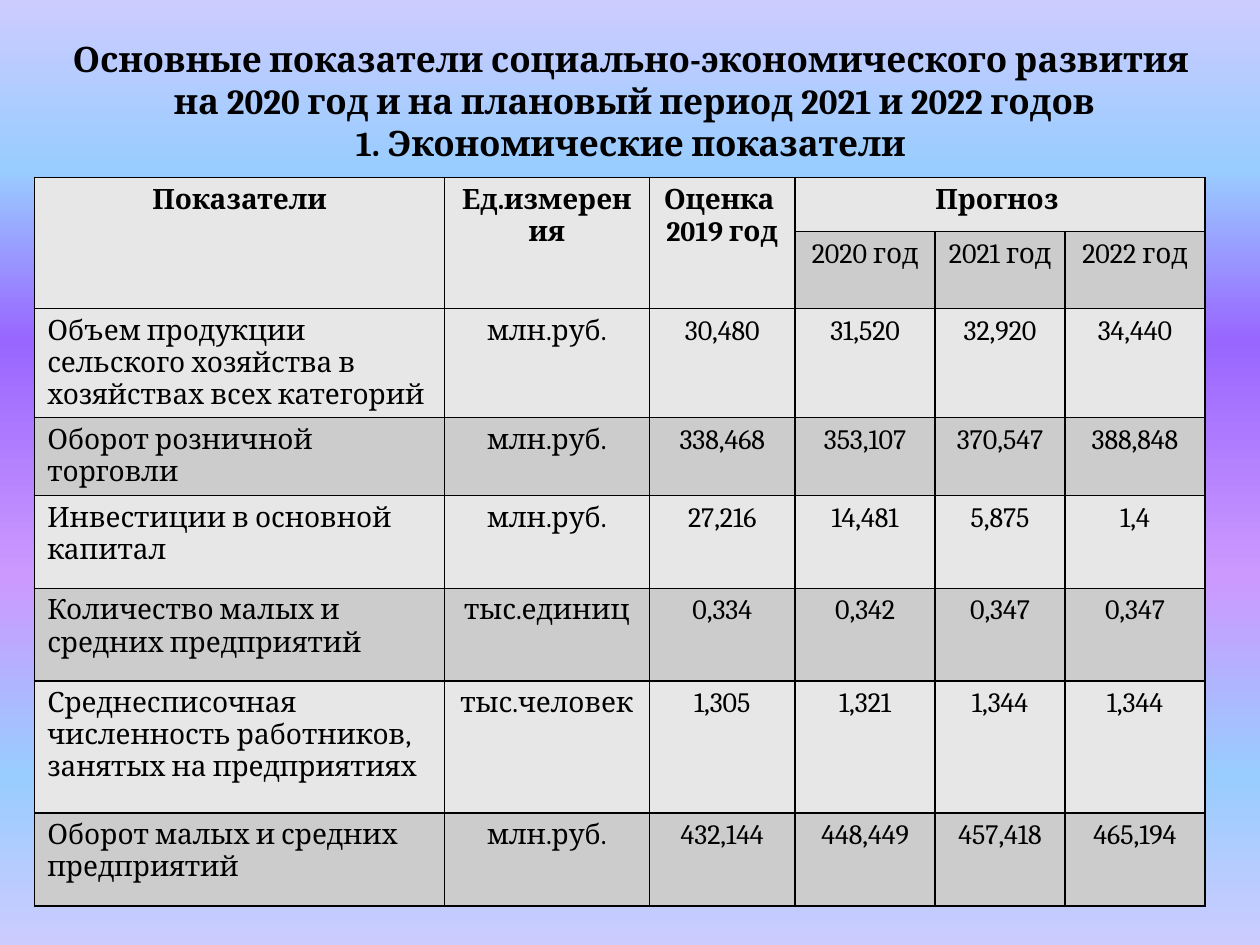
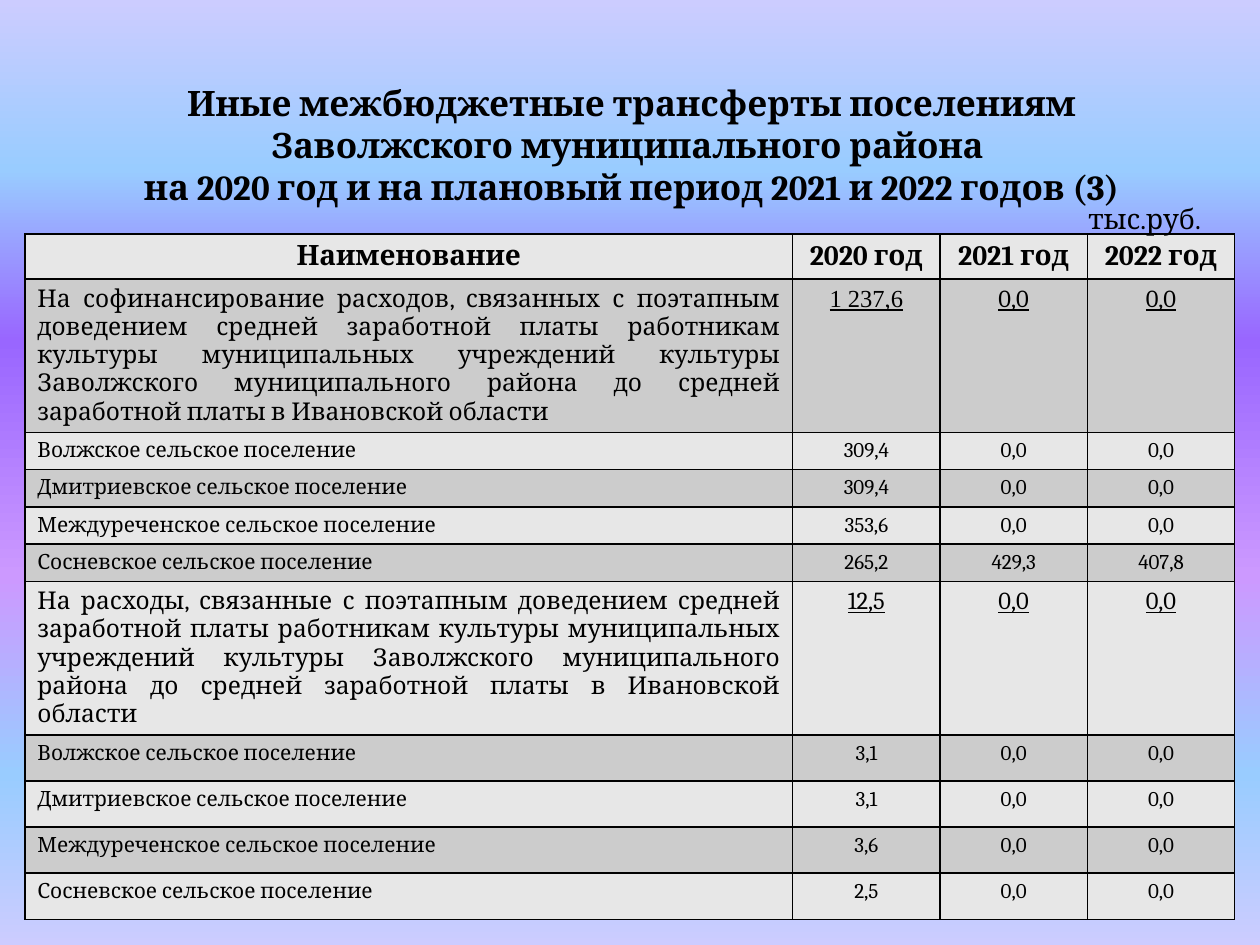
from itertools import product
from lxml.etree import SubElement
from pptx import Presentation
from pptx.dml.color import RGBColor
from pptx.enum.text import MSO_ANCHOR, MSO_AUTO_SIZE, PP_ALIGN
from pptx.oxml import parse_xml
from pptx.oxml.ns import nsdecls, qn
from pptx.util import Cm, Pt

BLACK = RGBColor(0x00, 0x00, 0x00)
LIGHT_BAND = RGBColor(0xE7, 0xE7, 0xE7)
DARK_BAND = RGBColor(0xCC, 0xCC, 0xCC)
LAVENDER = RGBColor(0xCC, 0xCC, 0xFF)
SKY = RGBColor(0x99, 0xCC, 0xFF)
VIOLET = RGBColor(0x99, 0x66, 0xFF)
ORCHID = RGBColor(0xCC, 0x99, 0xFF)
BACKGROUND_STOPS = [(0, LAVENDER), (18, SKY), (36, VIOLET), (61, ORCHID), (82, SKY), (100, LAVENDER)]

FONT = "Cambria"
NUMBER_FONT = "Times New Roman"
CENTER, LEFT, JUSTIFY = PP_ALIGN.CENTER, PP_ALIGN.LEFT, PP_ALIGN.JUSTIFY

INDICATORS = [
    ("Объем продукции сельского хозяйства в хозяйствах всех категорий",
     "млн.руб.", "30,480", "31,520", "32,920", "34,440"),
    ("Оборот розничной торговли", "млн.руб.", "338,468", "353,107", "370,547", "388,848"),
    ("Инвестиции в основной капитал", "млн.руб.", "27,216", "14,481", "5,875", "1,4"),
    ("Количество малых и средних предприятий", "тыс.единиц", "0,334", "0,342", "0,347", "0,347"),
    ("Среднесписочная численность работников, занятых на предприятиях",
     "тыс.человек", "1,305", "1,321", "1,344", "1,344"),
    ("Оборот малых и средних предприятий", "млн.руб.", "432,144", "448,449", "457,418", "465,194"),
]

YEARS = ("2020 год", "2021 год", "2022 год")
SETTLEMENTS = [f"{name} сельское поселение"
               for name in ("Волжское", "Дмитриевское", "Междуреченское", "Сосневское")]
NO_FUNDS = ("0,0", "0,0")
TRANSFERS = [
    ("На софинансирование расходов, связанных с поэтапным доведением средней заработной платы "
     "работникам культуры муниципальных учреждений культуры Заволжского муниципального района "
     "до средней заработной платы в Ивановской области",
     ("1 237,6", *NO_FUNDS), NUMBER_FONT,
     [("309,4", *NO_FUNDS), ("309,4", *NO_FUNDS), ("353,6", *NO_FUNDS), ("265,2", "429,3", "407,8")]),
    ("На расходы, связанные с поэтапным доведением средней заработной платы работникам культуры "
     "муниципальных учреждений культуры Заволжского муниципального района "
     "до средней заработной платы в Ивановской области",
     ("12,5", *NO_FUNDS), FONT,
     [(amount, *NO_FUNDS) for amount in ("3,1", "3,1", "3,6", "2,5")]),
]


def write_run(p, text, size, bold=False, underline=False, font=FONT):
    r = p.add_run()
    r.text = text
    r.font.name = font
    r.font.size = Pt(size)
    r.font.bold = bold
    r.font.underline = underline
    r.font.color.rgb = BLACK


def set_background(master):
    fill = master.background.fill
    fill.gradient()
    fill.gradient_angle = 270
    stops = master.element.find(".//" + qn("p:bgPr")).find(".//" + qn("a:gsLst"))
    for stop in list(stops):
        stops.remove(stop)
    for position, color in BACKGROUND_STOPS:
        stop = SubElement(stops, qn("a:gs"), pos=str(position * 1000))
        SubElement(stop, qn("a:srgbClr"), val=str(color))


def add_titled_slide(prs, lines, box):
    s = prs.slides.add_slide(prs.slide_layouts.get_by_name("Title Only"))
    title = s.shapes.title
    title.left, title.top, title.width, title.height = map(Cm, box)
    tf = title.text_frame
    tf.auto_size = MSO_AUTO_SIZE.NONE
    tf.vertical_anchor = MSO_ANCHOR.MIDDLE
    p = tf.paragraphs[0]
    p.alignment = CENTER
    for i, line in enumerate(lines):
        if i:
            p.add_line_break()
        write_run(p, line, 20, bold=True)
    return s


def border_cell(cell):
    tc_pr = cell._tc.get_or_add_tcPr()
    for i, side in enumerate(("lnL", "lnR", "lnT", "lnB")):
        tc_pr.insert(i, parse_xml(
            f'<a:{side} {nsdecls("a")} w="{Pt(1)}"><a:solidFill>'
            f'<a:srgbClr val="{BLACK}"/></a:solidFill></a:{side}>'))


def add_banded_table(s, left, top, widths, heights):
    frame = s.shapes.add_table(len(heights), len(widths), Cm(left), Cm(top),
                               Cm(sum(widths)), Cm(sum(heights)))
    table = frame.table
    for column, width in zip(table.columns, widths):
        column.width = Cm(width)
    for row, height in zip(table.rows, heights):
        row.height = Cm(height)
    for i, j in product(range(len(heights)), range(len(widths))):
        cell = table.cell(i, j)
        cell.fill.solid()
        cell.fill.fore_color.rgb = DARK_BAND if i % 2 else LIGHT_BAND
        border_cell(cell)
    return table


def write_cell(cell, text, size, align=CENTER, **style):
    tf = cell.text_frame
    for i, line in enumerate(text.split("\n")):
        p = tf.add_paragraph() if i else tf.paragraphs[0]
        p.alignment = align
        write_run(p, line, size, **style)


def write_row(table, row, label, values, size, align=LEFT, font=FONT, underline=False):
    write_cell(table.cell(row, 0), label, size, align)
    for j, value in enumerate(values, 1):
        write_cell(table.cell(row, j), value, size, underline=underline,
                   font=font if j == 1 else FONT)


def indicators_table(s, left, top):
    table = add_banded_table(s, left, top, [8.26, 4.13, 2.94, 2.82, 2.62, 2.82],
                             [1.09, 1.53, 2.2, 1.57, 1.87, 1.87, 2.66, 1.87])
    for j, heading in enumerate(("Показатели", "Ед.измерения", "Оценка \n2019 год")):
        table.cell(0, j).merge(table.cell(1, j))
        write_cell(table.cell(0, j), heading, 16, bold=True)
    table.cell(0, 3).merge(table.cell(0, 5))
    write_cell(table.cell(0, 3), "Прогноз ", 16, bold=True)
    for j, year in enumerate(YEARS, 3):
        write_cell(table.cell(1, j), year, 16)
    for i, (label, *values) in enumerate(INDICATORS, 2):
        write_row(table, i, label, values, 16)


def transfers_table(s, left, top):
    heights = [0.9, 3.08] + [0.75] * 4 + [3.08] + [0.93] * 4
    table = add_banded_table(s, left, top, [15.48] + [2.97] * 3, heights)
    for j, heading in enumerate(("Наименование", *YEARS)):
        write_cell(table.cell(0, j), heading, 16, bold=True)
    row = 1
    for purpose, totals, font, amounts in TRANSFERS:
        write_row(table, row, purpose, totals, 14, JUSTIFY, font, underline=True)
        for i, (settlement, values) in enumerate(zip(SETTLEMENTS, amounts), row + 1):
            write_row(table, i, settlement, values, 12)
        row += 1 + len(amounts)


def unit_label(s, left, top, width, height):
    tf = s.shapes.add_textbox(Cm(left), Cm(top), Cm(width), Cm(height)).text_frame
    tf.word_wrap = True
    write_run(tf.paragraphs[0], "тыс.руб.", 16)


def indicators_slide(prs):
    s = add_titled_slide(prs, ["Основные показатели социально-экономического развития ",
                               "на 2020 год и на плановый период 2021 и 2022 годов",
                               "1. Экономические показатели "], (0.89, 0.53, 23.8, 3))
    indicators_table(s, 0.7, 3.58)


def transfers_slide(prs):
    s = add_titled_slide(prs, ["Иные межбюджетные трансферты поселениям Заволжского муниципального района ",
                               "на 2020 год и на плановый период 2021 и 2022 годов (3)"],
                         (1.3, 1.32, 22.86, 3.18))
    transfers_table(s, 0.5, 4.72)
    unit_label(s, 21.69, 3.94, 3, 0.94)


def main():
    prs = Presentation()
    prs.slide_width, prs.slide_height = Cm(25.4), Cm(19.05)
    set_background(prs.slide_master)
    indicators_slide(prs)
    transfers_slide(prs)
    prs.save("out.pptx")


if __name__ == "__main__":
    main()
